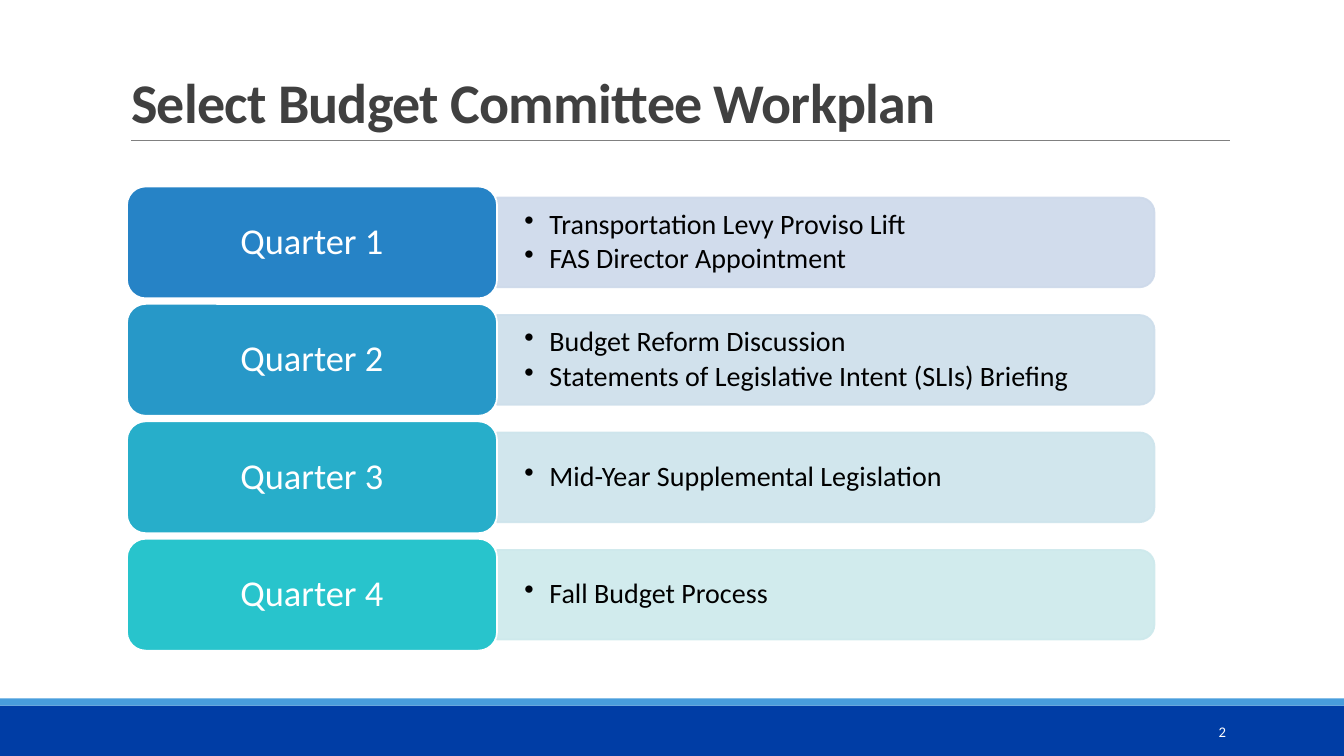
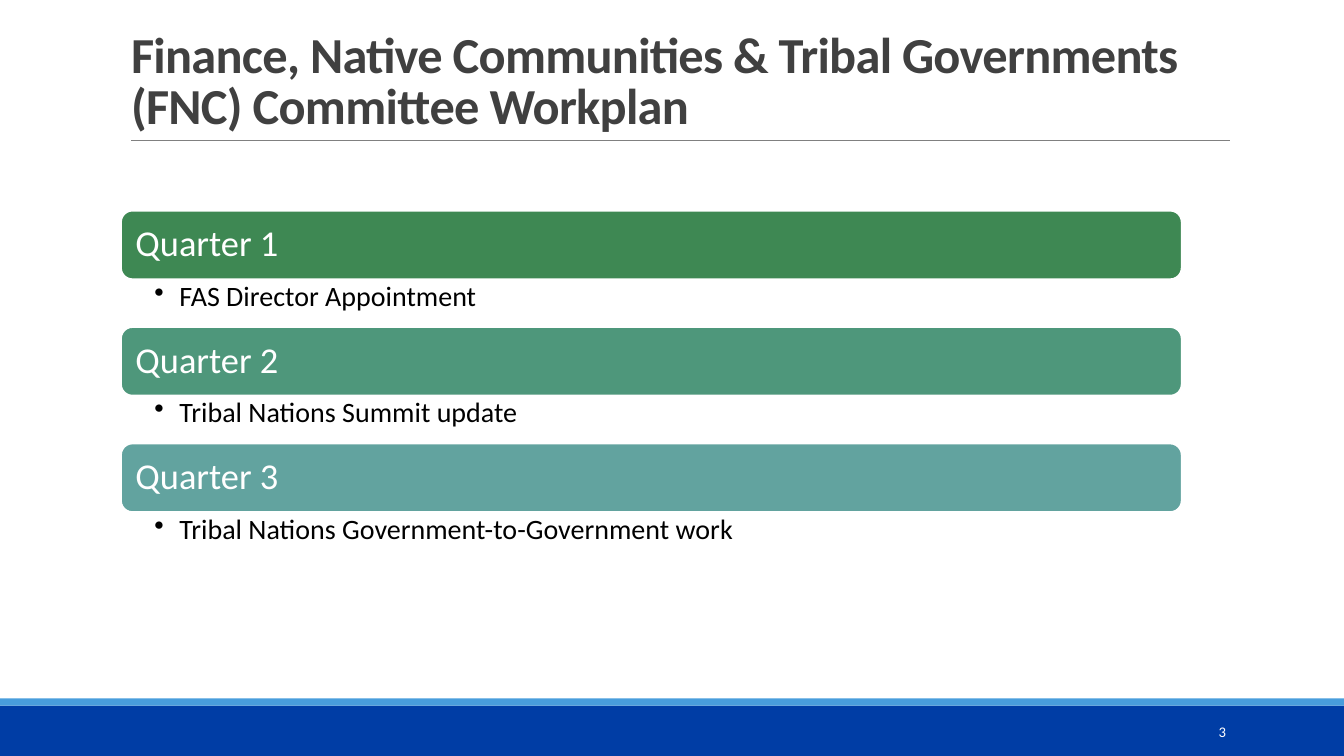
from lxml import etree
from pptx import Presentation
from pptx import util as u
from pptx.dml.color import RGBColor
from pptx.enum import shapes, text
from pptx.oxml.ns import qn

FONT = "Calibri"
WHITE, BLACK, GREY = "FFFFFF", "000000", "404040"
KIND = shapes.MSO_SHAPE
MID, TOP = text.MSO_ANCHOR.MIDDLE, text.MSO_ANCHOR.TOP
LEFT, MIDDLE, RIGHT = text.PP_ALIGN.LEFT, text.PP_ALIGN.CENTER, text.PP_ALIGN.RIGHT


def draw(slide, kind, x, y, w, h, fill, line=None):
    """Add a filled shape, measured in inches, outlined only if line is given."""
    shape = slide.shapes.add_shape(kind, *map(u.Inches, (x, y, w, h)))
    shape.shadow.inherit = False
    shape.fill.solid()
    shape.fill.fore_color.rgb = RGBColor.from_string(fill)
    if line:
        shape.line.color.rgb = RGBColor.from_string(line)
        shape.line.width = u.Pt(1.25)
    else:
        shape.line.fill.background()
    return shape


def write(shape, lines, size, color, pad, anchor=MID, align=LEFT,
          space=0.9, after=0, bullet=False):
    """Fill a shape with paragraphs; pad is left, top, right, bottom in inches."""
    frame = shape.text_frame
    frame.word_wrap = True
    frame.auto_size = text.MSO_AUTO_SIZE.NONE
    frame.vertical_anchor = anchor
    (frame.margin_left, frame.margin_top,
     frame.margin_right, frame.margin_bottom) = map(u.Inches, pad)
    frame.text = "\n".join(lines)
    for para in frame.paragraphs:
        if bullet:
            props = para._p.get_or_add_pPr()
            props.set("marL", str(u.Inches(0.25)))
            props.set("indent", str(u.Inches(-0.25)))
            etree.SubElement(props, qn("a:buChar")).set("char", "•")
        para.alignment = align
        para.line_spacing = space
        para.space_after = u.Pt(after)
        para.font.name = FONT
        para.font.size = u.Pt(size)
        para.font.color.rgb = RGBColor.from_string(color)
    return frame


prs = Presentation()
prs.slide_width, prs.slide_height = u.Inches(13.33), u.Inches(7.5)

# Title, rule, bands and number shared by all slides
titles = [
    ("Select Budget Committee Workplan", 40),
    ("Finance, Native Communities & Tribal Governments (FNC) Committee Workplan", 36),
]
for num, (name, size) in enumerate(titles, 2):
    slide = prs.slides.add_slide(prs.slide_layouts[5])
    draw(slide, KIND.RECTANGLE, 0, 7, 13.33, 0.5, "003DA5")
    draw(slide, KIND.RECTANGLE, 0, 6.93, 13.33, 0.07, "489DDC")

    rule = slide.shapes.add_connector(
        shapes.MSO_CONNECTOR.STRAIGHT, *map(u.Inches, (1.3, 1.39, 12.2, 1.39)))
    rule.line.color.rgb = RGBColor.from_string("808080")
    rule.line.width = u.Pt(0.5)
    etree.SubElement(rule._element.spPr, qn("a:effectLst"))

    title = slide.shapes.title
    title.left, title.top, title.width, title.height = map(
        u.Inches, (1.2, 0.31, 11, 1.08))
    frame = write(title, [name], size, GREY, (0.1, 0.05, 0.1, 0.05),
                  anchor=text.MSO_ANCHOR.BOTTOM, space=0.85)
    head = frame.paragraphs[0]
    head.font.bold = True
    head.runs[0]._r.get_or_add_rPr().set("spc", "-50")

    page = slide.shapes.add_textbox(*map(u.Inches, (10.83, 7.06, 1.43, 0.4)))
    write(page, [str(num)], 10.5, WHITE, (0.1, 0.05, 0.1, 0.05),
          align=RIGHT, space=1, after=6)

budget, finance = prs.slides

# Budget committee: a label on the left, a panel on the right
rows = [
    ("2683C6", "CDD9EA", ["Transportation Levy Proviso Lift",
                          "FAS Director Appointment"]),
    ("2798C8", "CDDEEB", ["Budget Reform Discussion",
                          "Statements of Legislative Intent (SLIs) Briefing"]),
    ("27AECA", "CDE4EC", ["Mid-Year Supplemental Legislation"]),
    ("28C4CC", "CDE9EC", ["Fall Budget Process"]),
]
left, first, step = 1.26, 1.85, 1.165
label, tall = 3.67, 1.11
wide, thick = 6.52, 0.89
start = left + label
for i, (dark, pale, items) in enumerate(rows):
    y = first + i * step
    mid = y + tall / 2
    # Turned by 90 degrees so that the rounded corners face right
    panel = draw(budget, KIND.ROUND_2_SAME_RECTANGLE,
                 start + (wide - thick) / 2, mid - wide / 2, thick, wide, pale, pale)
    panel.rotation = 90
    for tint in panel._element.spPr.iter(qn("a:srgbClr")):
        etree.SubElement(tint, qn("a:alpha")).set("val", "90000")
    note = budget.shapes.add_textbox(
        *map(u.Inches, (start, mid - 0.4, wide - 0.05, 0.8)))
    write(note, items, 20, BLACK, (0.27, 0.14, 0.27, 0.14), after=3, bullet=True)
    pill = draw(budget, KIND.ROUNDED_RECTANGLE, left, y, label, tall, dark, WHITE)
    write(pill, [f"Quarter {i + 1}"], 26, WHITE, (0.11, 0.05, 0.11, 0.05),
          align=MIDDLE)

# Finance committee: a full-width bar above each item
bars = [
    ("3E8853", "FAS Director Appointment"),
    ("4E977B", "Tribal Nations Summit update"),
    ("62A39F", "Tribal Nations Government-to-Government work"),
]
left, first, step = 1.2, 2.09, 1.155
wide, tall = 10.52, 0.68
for i, (fill, item) in enumerate(bars):
    y = first + i * step
    bar = draw(finance, KIND.ROUNDED_RECTANGLE, left, y, wide, tall, fill, WHITE)
    write(bar, [f"Quarter {i + 1}"], 26, WHITE, (0.11, 0.11, 0.11, 0.11))
    note = finance.shapes.add_textbox(
        *map(u.Inches, (left, y + tall, wide, step - tall)))
    write(note, [item], 20, BLACK, (0.33, 0.03, 0.16, 0.03),
          anchor=TOP, after=4, bullet=True)

prs.save("out.pptx")
